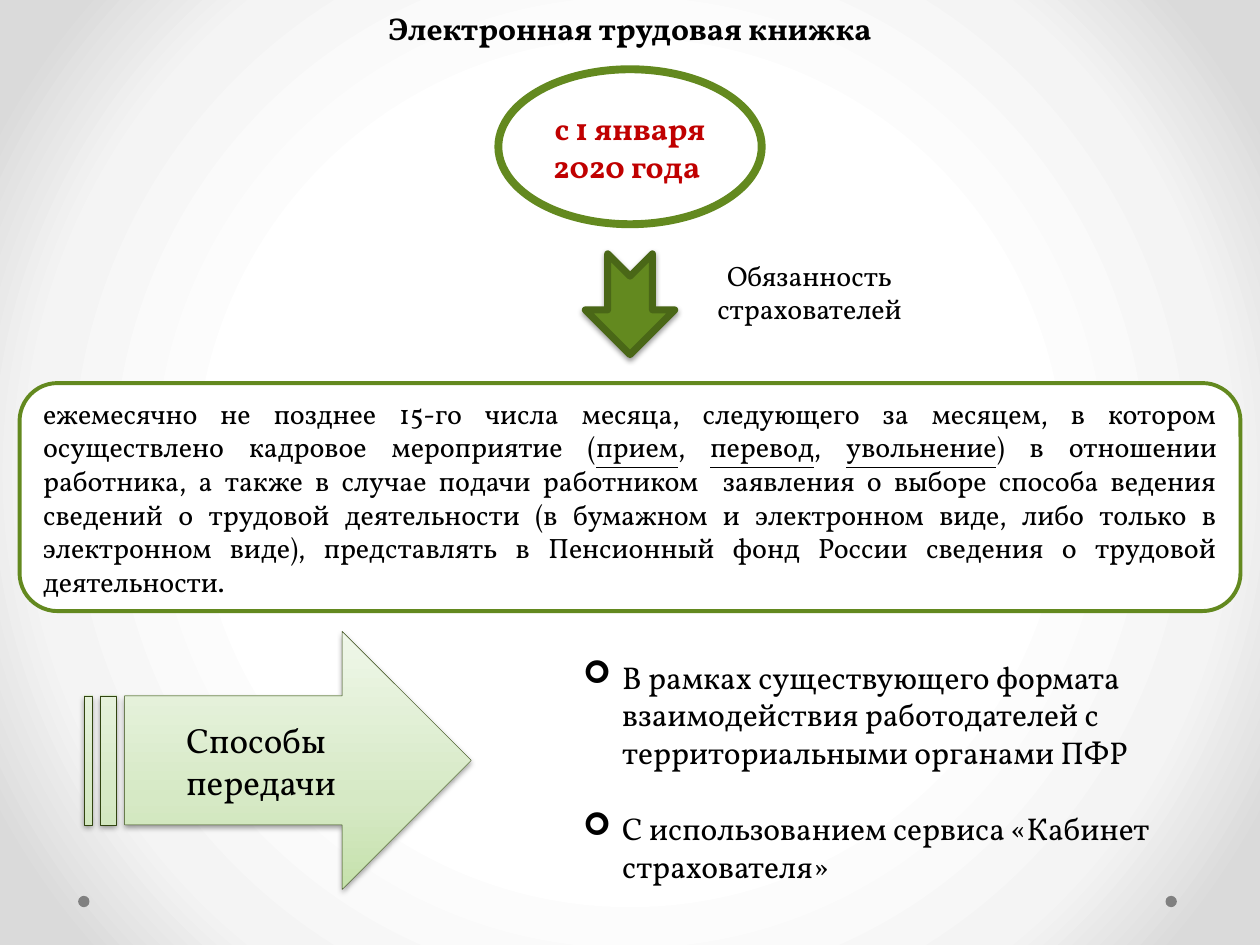
from dataclasses import dataclass
from lxml import etree
from pptx import Presentation, util as u
from pptx.dml.color import RGBColor
from pptx.enum import shapes, text
from pptx.oxml import parse_xml
from pptx.oxml.ns import qn, nsdecls


@dataclass(frozen=True)
class Theme:
    font: str = "Vollkorn"
    black: str = "000000"
    white: str = "FFFFFF"
    red: str = "C00000"
    green: str = "63891F"
    dark_green: str = "4A6717"
    edge: str = "314410"
    gray: str = "808080"
    small: int = 16
    medium: int = 18
    large: int = 20


THEME = Theme()
SHAPE = shapes.MSO_SHAPE
ALIGN = text.PP_ALIGN
WIDTH, HEIGHT = 10, 7.5
CENTER = WIDTH / 2

TITLE = "Электронная трудовая книжка"
START_DATE = "с 1 января 2020 года "
DUTY_LABEL = "Обязанность страхователей"
DUTY_RUNS = [
    ("ежемесячно не позднее 15-го числа месяца, следующего за месяцем, в котором осуществлено "
     "кадровое мероприятие (", False),
    ("прием", True),
    (", ", False),
    ("перевод", True),
    (", ", False),
    ("увольнение", True),
    (") в отношении работника, а также в случае подачи работником  заявления о выборе способа "
     "ведения сведений о трудовой деятельности (в бумажном и электронном виде, либо только в "
     "электронном виде), представлять в Пенсионный фонд России сведения о трудовой деятельности.",
     False),
]
METHODS_LABEL = "Способы передачи"
METHODS = [
    "В рамках существующего формата взаимодействия работодателей с территориальными органами ПФР",
    "С использованием сервиса «Кабинет страхователя»",
]
BACKGROUND_STOPS = [(50, "FFFFFF"), (76, "F4F4F4"), (92, "DADADA")]
ARROW_STOPS = [(0, "C5E1AB"), (35, "D6E9C5"), (100, "EFF7E9")]
RADIAL = ('<a:path path="circle"><a:fillToRect l="50000" t="50000" r="50000" b="50000"/></a:path>')
UPWARD = '<a:lin ang="16200000" scaled="0"/>'


def color(value):
    return RGBColor.from_string(value)


def centered(width):
    return CENTER - width / 2


def set_gradient(fill, owner, stops, direction):
    fill.gradient()
    old = next(owner.iter(qn("a:gradFill")))
    stop_xml = "".join(
        f'<a:gs pos="{share * 1000}"><a:srgbClr val="{value}"/></a:gs>' for share, value in stops)
    new = parse_xml(f'<a:gradFill {nsdecls("a")} rotWithShape="1">'
                    f'<a:gsLst>{stop_xml}</a:gsLst>{direction}</a:gradFill>')
    old.getparent().replace(old, new)


def add_shadow(shape):
    effects = shape._element.spPr.find(qn("a:effectLst"))
    effects.append(parse_xml(
        f'<a:outerShdw {nsdecls("a")} blurRad="{u.Pt(3.1)}" dist="{u.Pt(1.6)}" dir="5400000" '
        f'rotWithShape="0"><a:srgbClr val="{THEME.black}"><a:alpha val="38000"/>'
        '</a:srgbClr></a:outerShdw>'))


def add_figure(slide, kind, box, fill=None, line=None, weight=0):
    shape = slide.shapes.add_shape(kind, *map(u.Inches, box))
    shape.shadow.inherit = False
    if fill:
        shape.fill.solid()
        shape.fill.fore_color.rgb = color(fill)
    if line:
        shape.line.color.rgb = color(line)
        shape.line.width = u.Pt(weight)
    else:
        shape.line.fill.background()
    return shape


def add_run(paragraph, words, size, value=THEME.black, bold=False, underline=False):
    run = paragraph.add_run()
    run.text = words
    font = run.font
    font.name, font.size, font.bold = THEME.font, u.Pt(size), bold
    font.color.rgb = color(value)
    if underline:
        font.underline = True


def add_text_frame(slide, box):
    frame = slide.shapes.add_textbox(*map(u.Inches, box)).text_frame
    frame.word_wrap = True
    return frame


def set_bullet(paragraph, indent):
    properties = paragraph._p.get_or_add_pPr()
    properties.set("marL", str(u.Inches(indent)))
    properties.set("indent", str(-u.Inches(indent)))
    etree.SubElement(properties, qn("a:buFont")).set("typeface", "Wingdings")
    etree.SubElement(properties, qn("a:buChar")).set("char", "➢")


def add_title(slide):
    title = slide.shapes.title
    title.left, title.top, title.width, title.height = map(u.Inches, (0, 0.02, WIDTH, 0.4))
    frame = title.text_frame
    frame.auto_size = text.MSO_AUTO_SIZE.NONE
    frame.vertical_anchor = text.MSO_ANCHOR.TOP
    paragraph = frame.paragraphs[0]
    paragraph.alignment = ALIGN.CENTER
    add_run(paragraph, TITLE, THEME.medium, bold=True)


def add_duty(slide):
    width = 9.69
    panel = add_figure(slide, SHAPE.ROUNDED_RECTANGLE, (centered(width), 3.04, width, 1.81),
                       THEME.white, THEME.green, 2.25)
    paragraph = panel.text_frame.paragraphs[0]
    paragraph.alignment = ALIGN.JUSTIFY
    for words, underline in DUTY_RUNS:
        add_run(paragraph, words, THEME.small, underline=underline)

    width = 2.09
    oval = add_figure(slide, SHAPE.OVAL, (centered(width), 0.55, width, 1.23),
                      THEME.white, THEME.green, 4.5)
    paragraph = oval.text_frame.paragraphs[0]
    paragraph.alignment = ALIGN.CENTER
    add_run(paragraph, START_DATE, THEME.medium, THEME.red, bold=True)

    width = 0.8
    arrow = add_figure(slide, SHAPE.NOTCHED_RIGHT_ARROW, (centered(width), 2.06, width, 0.71),
                       THEME.green, THEME.dark_green, 4)
    arrow.rotation = 90
    add_shadow(arrow)

    paragraph = add_text_frame(slide, (5.48, 2, 1.89, 0.64)).paragraphs[0]
    paragraph.alignment = ALIGN.CENTER
    add_run(paragraph, DUTY_LABEL, THEME.small)


def add_methods(slide):
    arrow = add_figure(slide, SHAPE.STRIPED_RIGHT_ARROW, (0.67, 5.01, 3.07, 2.05),
                       line=THEME.edge, weight=0.25)
    set_gradient(arrow.fill, arrow._element.spPr, ARROW_STOPS, UPWARD)
    add_shadow(arrow)
    label = add_text_frame(slide, (1.38, 5.65, 1.65, 0.77))
    add_run(label.paragraphs[0], METHODS_LABEL, THEME.large)

    frame = add_text_frame(slide, (4.53, 5.17, 5.32, 1.92))
    for index, method in enumerate(METHODS):
        paragraph = frame.add_paragraph() if index else frame.paragraphs[0]
        if index:
            paragraph.space_before = u.Pt(1.2 * THEME.medium)
        set_bullet(paragraph, 0.31)
        add_run(paragraph, method, THEME.medium)


def main():
    presentation = Presentation()
    presentation.slide_width, presentation.slide_height = u.Inches(WIDTH), u.Inches(HEIGHT)
    slide = presentation.slides.add_slide(presentation.slide_layouts[5])
    set_gradient(slide.background.fill, slide._element, BACKGROUND_STOPS, RADIAL)
    add_title(slide)
    for left in (0.62, 9.25):
        add_figure(slide, SHAPE.OVAL, (left, 7.11, 0.09, 0.09), THEME.gray)
    add_duty(slide)
    add_methods(slide)
    presentation.save("out.pptx")


if __name__ == "__main__":
    main()
